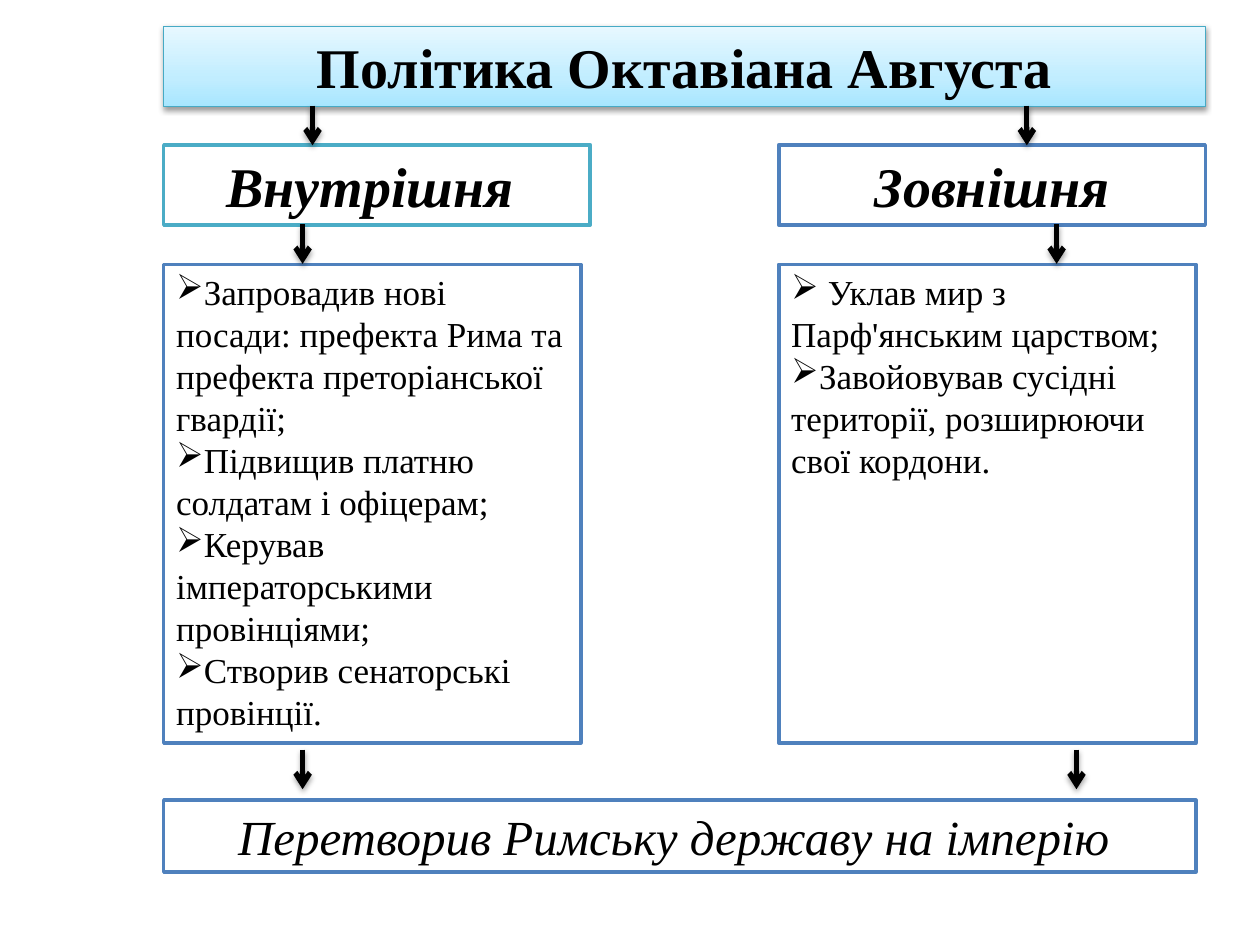
from copy import deepcopy
from dataclasses import dataclass

from lxml.etree import SubElement
from pptx import Presentation
from pptx.dml.color import RGBColor
from pptx.enum.shapes import MSO_CONNECTOR, MSO_SHAPE
from pptx.enum.text import MSO_ANCHOR, MSO_AUTO_SIZE, PP_ALIGN
from pptx.oxml.ns import qn
from pptx.util import Cm, Pt

COLORS = {
    "text": "000000", "white": "FFFFFF", "blue": "4F81BD", "teal": "4BACC6",
    "title_line": "46AAC5",
    "grad_dark": "A7E6FF", "grad_mid": "C1EDFF", "grad_light": "E7F8FF",
}
FONT = "Times New Roman"
LEFT, RIGHT = 3.3, 15.7
HEAD_W, BODY_W = 8.6, 8.41
ARROW_LEN = 0.8


@dataclass
class Box:
    x: float
    y: float
    w: float
    h: float
    paragraphs: list[str]
    size: int = 32
    bold: bool = False
    italic: bool = False
    bullet: str = ""
    line: str = "blue"
    line_width: float = 2


@dataclass
class Arrow:
    x: float
    y: float


TITLE = Box(LEFT, 0.53, RIGHT + HEAD_W - LEFT, 1.62, ["Політика Октавіана Августа"],
            bold=True, line="title_line", line_width=0.75)
BOXES = [
    Box(LEFT, 2.92, HEAD_W, 1.62, ["Внутрішня "], bold=True, italic=True, line="teal"),
    Box(RIGHT, 2.92, HEAD_W, 1.62, ["Зовнішня"], bold=True, italic=True),
    Box(LEFT, 5.33, BODY_W, 9.65, [
        "Запровадив нові посади: префекта Рима та префекта преторіанської гвардії;",
        "Підвищив платню солдатам і офіцерам;",
        "Керував імператорськими провінціями;",
        "Створив сенаторські провінції.",
    ], size=20, bullet="➢"),
    Box(RIGHT, 5.33, BODY_W, 9.65, [
        " Уклав мир з Парф'янським царством;",
        "Завойовував сусідні території, розширюючи свої кордони.",
    ], size=20, bullet="➢"),
    Box(LEFT, 16.13, RIGHT + BODY_W - LEFT, 1.45,
        ["Перетворив Римську державу на імперію "], size=28, italic=True),
]
ARROWS = [
    Arrow(6.3, 2.13), Arrow(20.7, 2.13),
    Arrow(6.1, 4.52), Arrow(21.3, 4.52),
    Arrow(6.1, 15.11), Arrow(21.7, 15.11),
]


def rgb(name: str) -> RGBColor:
    return RGBColor.from_string(COLORS[name])


def add_text(p, text: str, *, size: int, bold: bool = False,
             italic: bool = False, bullet: str = "") -> None:
    p.alignment = PP_ALIGN.LEFT if bullet else PP_ALIGN.CENTER
    if bullet:
        pPr = p._p.get_or_add_pPr()
        pPr.set("marL", "0")
        pPr.set("indent", "0")
        SubElement(pPr, qn("a:buChar"), char=bullet)
    r = p.add_run()
    r.text = text
    r.font.name, r.font.size = FONT, Pt(size)
    r.font.bold, r.font.italic = bold, italic
    r.font.color.rgb = rgb("text")


def add_shadow(sp, distance: float, alpha: int) -> None:
    spPr = sp._element.spPr
    effects = spPr.find(qn("a:effectLst"))
    if effects is None:
        effects = SubElement(spPr, qn("a:effectLst"))
    shadow = SubElement(effects, qn("a:outerShdw"), blurRad=str(Pt(3.1)),
                        dist=str(Pt(distance)), dir="5400000", rotWithShape="0")
    color = SubElement(shadow, qn("a:srgbClr"), val=COLORS["text"])
    SubElement(color, qn("a:alpha"), val=str(alpha * 1000))


def add_box(s, box: Box):
    sp = s.shapes.add_shape(MSO_SHAPE.RECTANGLE, Cm(box.x), Cm(box.y), Cm(box.w), Cm(box.h))
    sp.shadow.inherit = False
    sp.fill.solid()
    sp.fill.fore_color.rgb = rgb("white")
    sp.line.color.rgb = rgb(box.line)
    sp.line.width = Pt(box.line_width)
    tf = sp.text_frame
    tf.word_wrap = True
    tf.auto_size = MSO_AUTO_SIZE.SHAPE_TO_FIT_TEXT
    tf.vertical_anchor = MSO_ANCHOR.TOP
    for i, text in enumerate(box.paragraphs):
        p = tf.add_paragraph() if i else tf.paragraphs[0]
        add_text(p, text, size=box.size, bold=box.bold, italic=box.italic, bullet=box.bullet)
    return sp


def add_title(s, box: Box) -> None:
    sp = add_box(s, box)
    sp.fill.gradient()
    sp.fill.gradient_angle = 90
    stops = sp._element.spPr.find(".//" + qn("a:gsLst"))
    stops.insert(1, deepcopy(stops[0]))
    scale = [(0, "grad_dark"), (0.35, "grad_mid"), (1, "grad_light")]
    for stop, (position, color) in zip(sp.fill.gradient_stops, scale):
        stop.position = position
        stop.color.rgb = rgb(color)
    add_shadow(sp, 1.6, 38)


def add_arrow(s, arrow: Arrow) -> None:
    sp = s.shapes.add_connector(MSO_CONNECTOR.STRAIGHT, Cm(arrow.x), Cm(arrow.y),
                                Cm(arrow.x), Cm(arrow.y + ARROW_LEN))
    sp.line.color.rgb = rgb("text")
    sp.line.width = Pt(3)
    SubElement(sp.line._get_or_add_ln(), qn("a:tailEnd"), type="arrow")
    add_shadow(sp, 1.8, 35)


def main() -> None:
    """Build the slide on the policy of Octavian Augustus."""
    prs = Presentation()
    prs.slide_width, prs.slide_height = Cm(25.4), Cm(19.05)
    s = prs.slides.add_slide(prs.slide_layouts[6])
    add_title(s, TITLE)
    for box in BOXES:
        add_box(s, box)
    for arrow in ARROWS:
        add_arrow(s, arrow)
    prs.save("out.pptx")


if __name__ == "__main__":
    main()
